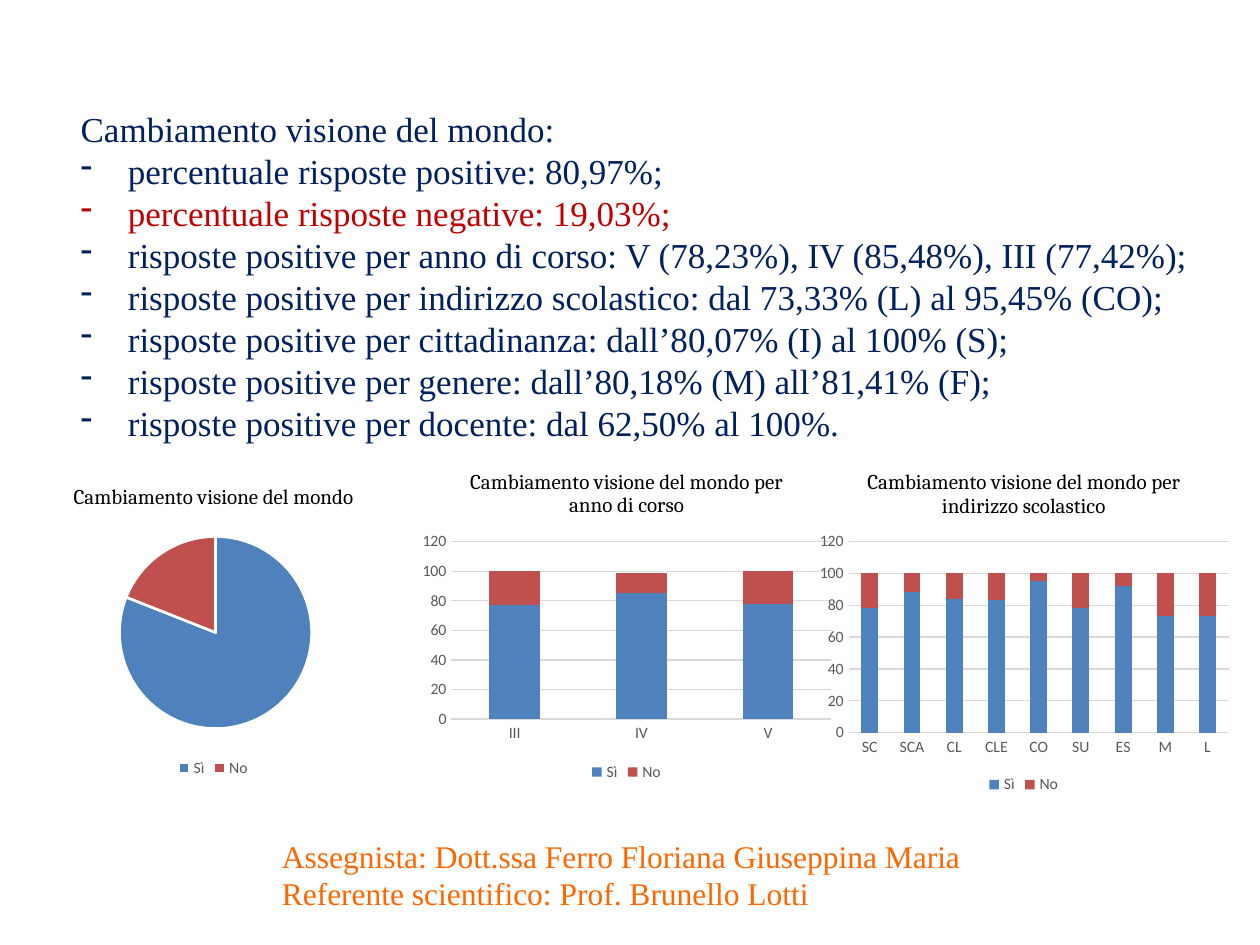
import pptx
import pptx.chart.data
import pptx.dml.color
import pptx.enum.chart
import pptx.oxml
import pptx.oxml.ns
import pptx.util

Pt = pptx.util.Pt
COLORS = {
    "navy": "002060", "red": "C00000", "orange": "FF6600", "black": "000000",
    "label": "595959", "grid": "D9D9D9", "yes": "4F81BD", "no": "C0504D",
    "white": "FFFFFF",
}
FINDINGS = [
    "percentuale risposte positive: 80,97%;",
    "percentuale risposte negative: 19,03%;",
    "risposte positive per anno di corso: V (78,23%), IV (85,48%), III (77,42%);",
    "risposte positive per indirizzo scolastico: dal 73,33% (L) al 95,45% (CO);",
    "risposte positive per cittadinanza: dall’80,07% (I) al 100% (S);",
    "risposte positive per genere: dall’80,18% (M) all’81,41% (F);",
    "risposte positive per docente: dal 62,50% al 100%.",
]
CREDITS = [
    "Assegnista: Dott.ssa Ferro Floriana Giuseppina Maria",
    "Referente scientifico: Prof. Brunello Lotti",
]
BY_YEAR = {"III": (77, 23), "IV": (85, 14), "V": (78, 22)}
BY_TRACK = {
    "SC": (78, 22), "SCA": (88, 12), "CL": (84, 16), "CLE": (83, 17), "CO": (95, 5),
    "SU": (78, 22), "ES": (92, 8), "M": (73, 27), "L": (73, 27),
}


def rgb(color):
    return pptx.dml.color.RGBColor.from_string(COLORS[color])


def set_values(target, values):
    for name, value in values.items():
        setattr(target, name, value)


def set_font(font, face, size, color):
    set_values(font, {"name": face, "size": Pt(size), "bold": False})
    font.color.rgb = rgb(color)


def paint(part, color):
    part.format.fill.solid()
    part.format.fill.fore_color.rgb = rgb(color)


def place_plot(chart, frame):
    """Fix the inner plot area, given as fractions of the chart: x, y, w, h."""
    plot_area = chart._chartSpace.chart.plotArea
    for old in plot_area.findall(pptx.oxml.ns.qn("c:layout")):
        plot_area.remove(old)
    sizes = "".join(f'<c:{key} val="{value}"/>' for key, value in zip("xywh", frame))
    plot_area.insert(0, pptx.oxml.parse_xml(
        f'<c:layout {pptx.oxml.ns.nsdecls("c")}><c:manualLayout>'
        '<c:layoutTarget val="inner"/><c:xMode val="edge"/><c:yMode val="edge"/>'
        f'{sizes}</c:manualLayout></c:layout>'))


class SlideWriter:
    text_face, chart_face, title_face = "Times New Roman", "Calibri", "Cambria"
    bullet_indent = Pt(27)

    def __init__(self, slide):
        self.slide = slide

    def text(self, box, lines, size):
        """Write lines of (text, color, bulleted)."""
        frame = self.slide.shapes.add_textbox(*map(Pt, box)).text_frame
        frame.word_wrap = True
        for index, (wording, color, bulleted) in enumerate(lines):
            paragraph = frame.add_paragraph() if index else frame.paragraphs[0]
            if bulleted:
                self.bullet(paragraph)
            run = paragraph.add_run()
            run.text = wording
            set_font(run.font, self.text_face, size, color)

    def bullet(self, paragraph):
        properties = paragraph._p.get_or_add_pPr()
        properties.set("marL", str(self.bullet_indent))
        properties.set("indent", str(-self.bullet_indent))
        mark = pptx.oxml.ns.qn("a:buChar")
        properties.append(properties.makeelement(mark, {"char": "-"}))

    def chart(self, kind, box, title, categories, series, plot_frame):
        data = pptx.chart.data.CategoryChartData()
        data.categories = categories
        for name, values in series.items():
            data.add_series(name, values)
        chart = self.slide.shapes.add_chart(kind, *map(Pt, box), data).chart
        set_font(chart.font, self.chart_face, 10, "black")
        set_values(chart, {"has_title": True, "has_legend": True})
        heading = chart.chart_title.text_frame.paragraphs[0].add_run()
        heading.text = title
        set_font(heading.font, self.title_face, 12, "black")
        set_values(chart.legend, {
            "position": pptx.enum.chart.XL_LEGEND_POSITION.BOTTOM,
            "include_in_layout": False,
        })
        set_font(chart.legend.font, self.chart_face, 9, "label")
        place_plot(chart, plot_frame)
        return chart

    def pie(self, box, title, shares, plot_frame):
        chart = self.chart(pptx.enum.chart.XL_CHART_TYPE.PIE, box, title,
                           list(shares), {"Series 1": list(shares.values())}, plot_frame)
        chart.plots[0].vary_by_categories = True
        for index, color in enumerate(("yes", "no")):
            slice_ = chart.plots[0].series[0].points[index]
            paint(slice_, color)
            slice_.format.line.color.rgb = rgb("white")
            slice_.format.line.width = Pt(1.5)

    def stacked_columns(self, box, title, answers, plot_frame):
        series = dict(zip(("Sì", "No"), zip(*answers.values())))
        chart = self.chart(pptx.enum.chart.XL_CHART_TYPE.COLUMN_STACKED, box, title,
                           list(answers), series, plot_frame)
        set_values(chart.plots[0], {
            "gap_width": 150, "overlap": 100, "vary_by_categories": False})
        for bars, color in zip(chart.plots[0].series, ("yes", "no")):
            paint(bars, color)
        no_tick = pptx.enum.chart.XL_TICK_MARK.NONE
        for axis in (chart.category_axis, chart.value_axis):
            set_values(axis, {"major_tick_mark": no_tick, "minor_tick_mark": no_tick})
            set_font(axis.tick_labels.font, self.chart_face, 9, "label")
            axis.format.line.fill.background()
        set_values(chart.value_axis, {
            "minimum_scale": 0, "maximum_scale": 120, "major_unit": 20,
            "has_major_gridlines": True})
        set_values(chart.value_axis.tick_labels, {
            "number_format": "General", "number_format_is_linked": False})
        grid = chart.value_axis.major_gridlines.format.line
        grid.color.rgb = rgb("grid")
        grid.width = Pt(0.75)


def main():
    deck = pptx.Presentation()
    set_values(deck, {"slide_width": Pt(720), "slide_height": Pt(540)})
    writer = SlideWriter(deck.slides.add_slide(deck.slide_layouts[6]))
    topic = "Cambiamento visione del mondo"

    writer.text((154, 474.5, 412, 51), [(line, "orange", False) for line in CREDITS], 18)
    findings = [(line, "red" if "negative" in line else "navy", True) for line in FINDINGS]
    writer.text((39, 57.6, 656, 201), [(f"{topic}:", "navy", False)] + findings, 20)

    writer.pie((0, 267, 244, 180), topic, {"Sì": 81, "No": 19}, (0.28, 0.22, 0.45, 0.61))
    writer.stacked_columns((236, 257.8, 244, 191.5), f"{topic} per anno di corso",
                           BY_YEAR, (0.09, 0.27, 0.89, 0.53))
    writer.stacked_columns((463, 257.8, 244, 198.7), f"{topic} per indirizzo scolastico",
                           BY_TRACK, (0.09, 0.26, 0.89, 0.55))
    deck.save("out.pptx")


if __name__ == "__main__":
    main()
